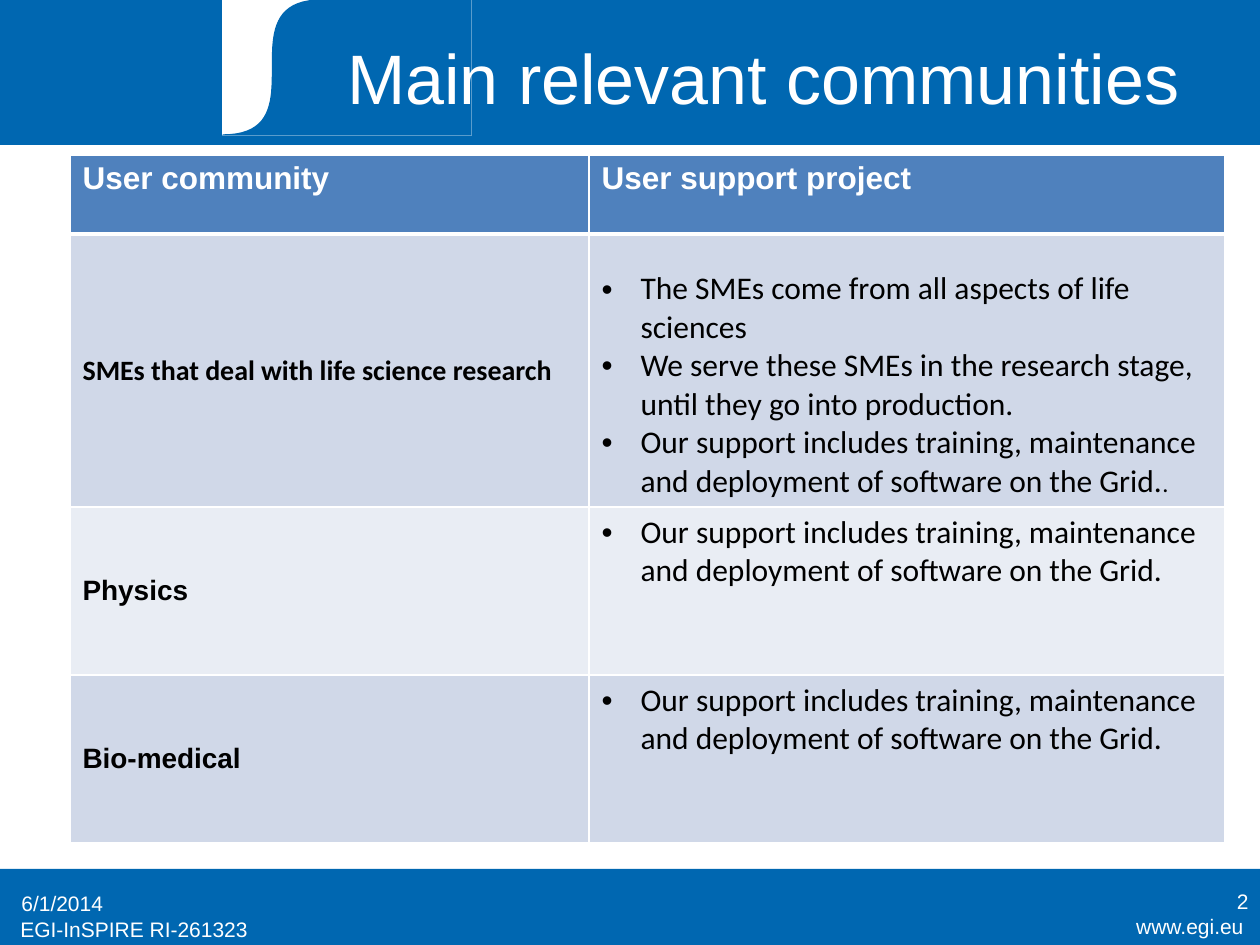
"""Build the slide on the main relevant user communities."""
from lxml import etree
from pptx import Presentation, util as u
from pptx.dml.color import RGBColor
from pptx.enum import shapes, text
from pptx.oxml.ns import qn

BLUE = RGBColor(0x00, 0x67, 0xB1)
HEAD = RGBColor(0x4F, 0x81, 0xBD)
DARK = RGBColor(0xD0, 0xD8, 0xE8)
LIGHT = RGBColor(0xE9, 0xED, 0xF4)
WHITE = RGBColor(0xFF, 0xFF, 0xFF)
BLACK = RGBColor(0x00, 0x00, 0x00)

TITLE = "Main relevant communities"
HEADS = ["User community", "User support project"]
HELP = "Our support includes training, maintenance and deployment of software on the Grid."
ROWS = [
    ("SMEs that deal with life science research", "Calibri", [
        [("The SMEs come from all aspects of life sciences", 18)],
        [("We serve these SMEs in the research stage, until they go into production.", 18)],
        [(HELP, 18), (".", 14)],
    ]),
    ("Physics", "Arial", [[(HELP, 18)]]),
    ("Bio-medical", "Arial", [[(HELP, 18)]]),
]
LEFT, RIGHT = text.PP_ALIGN.LEFT, text.PP_ALIGN.RIGHT
NOTES = [
    ("www.egi.eu", (1057, 907, 199, 39), RIGHT),
    ("EGI-InSPIRE RI-261323", (8, 910, 315, 39), LEFT),
    ("6/1/2014", (9, 878, 294, 50), LEFT),
    ("2", (967, 876, 294, 50), RIGHT),
]
WIDTHS = [519, 636]
HEIGHTS = [79, 273, 168, 168]
GAP = 36
INDENT = 39
MIDDLE = text.MSO_ANCHOR.MIDDLE


def px(n):
    return u.Emu(round(n * 914400 / 126))


def box(*dims):
    return [px(n) for n in dims]


def paint(shape, fill, line=None):
    shape.shadow.inherit = False
    shape.fill.solid()
    shape.fill.fore_color.rgb = fill
    if line is None:
        shape.line.fill.background()
    else:
        shape.line.color.rgb = line
        shape.line.width = u.Pt(0.75)


def write(para, words, size, face, color, bold=False):
    run = para.add_run()
    run.text = words
    font = run.font
    font.size, font.name, font.bold = u.Pt(size), face, bold
    font.color.rgb = color


def bullet(para):
    props = para._p.get_or_add_pPr()
    props.set("marL", str(px(INDENT)))
    props.set("indent", str(-px(INDENT)))
    etree.SubElement(props, qn("a:buFont"), typeface="Arial")
    etree.SubElement(props, qn("a:buChar"), char="•")


def dress(cell, fill, base=1):
    props = cell._tc.get_or_add_tcPr()
    for side, width in (("L", 1), ("R", 1), ("T", 1), ("B", base)):
        edge = etree.SubElement(props, qn("a:ln" + side), w=str(u.Pt(width)))
        ink = etree.SubElement(edge, qn("a:solidFill"))
        etree.SubElement(ink, qn("a:srgbClr"), val=str(WHITE))
    cell.fill.solid()
    cell.fill.fore_color.rgb = fill


def curve(start, end, steps=40):
    (x0, y0), (x1, y1) = start, end
    for i in range(1, steps + 1):
        t = i / steps
        a, b, c, d = (1 - t) ** 3, 3 * t * (1 - t) ** 2, 3 * t * t * (1 - t), t ** 3
        yield px(x0 * (a + c) + x1 * (b + d)), px(y0 * (a + b) + y1 * (c + d))


def frame(slide):
    for dims, fill, line in (
        ((0, 869, 1260, 76), BLUE, None),
        ((0, 0, 1260, 144), BLUE, BLUE),
        ((223, 0, 248, 135), WHITE, WHITE),
    ):
        paint(slide.shapes.add_shape(shapes.MSO_SHAPE.RECTANGLE, *box(*dims)), fill, line)
    pen = slide.shapes.build_freeform(px(471), px(0))
    pen.add_line_segments([box(471, 135), box(223, 135)], close=False)
    pen.add_line_segments(list(curve((223, 135), (322, 0))), close=True)
    paint(pen.convert_to_shape(), BLUE, BLUE)
    for words, dims, align in NOTES:
        body = slide.shapes.add_textbox(*box(*dims)).text_frame
        body.word_wrap = True
        body.vertical_anchor = MIDDLE
        para = body.paragraphs[0]
        para.alignment = align
        write(para, words, 12, "Arial", WHITE)


def heading(slide):
    title = slide.shapes.title
    title.left, title.top, title.width, title.height = box(292, 16, 942, 120)
    body = title.text_frame
    body.vertical_anchor = MIDDLE
    para = body.paragraphs[0]
    para.alignment = text.PP_ALIGN.CENTER
    write(para, TITLE, 40, "Arial", WHITE)
    tree = slide.shapes._spTree
    tree.remove(title._element)
    tree.append(title._element)


def grid(slide):
    dims = box(70, 155, sum(WIDTHS), sum(HEIGHTS))
    table = slide.shapes.add_table(len(HEIGHTS), len(WIDTHS), *dims).table
    for col, width in zip(table.columns, WIDTHS):
        col.width = px(width)
    for row, height in zip(table.rows, HEIGHTS):
        row.height = px(height)
    for j, words in enumerate(HEADS):
        cell = table.cell(0, j)
        dress(cell, HEAD, 3)
        write(cell.text_frame.paragraphs[0], words, 18, "Arial", WHITE, True)
    for i, (name, face, items) in enumerate(ROWS, 1):
        group, help_ = table.cell(i, 0), table.cell(i, 1)
        for cell in (group, help_):
            dress(cell, DARK if i % 2 else LIGHT)
        group.vertical_anchor = MIDDLE
        write(group.text_frame.paragraphs[0], name, 16, face, BLACK, True)
        if len(items) > 1:
            help_.margin_top = px(GAP)
        body = help_.text_frame
        for k, runs in enumerate(items):
            para = body.add_paragraph() if k else body.paragraphs[0]
            bullet(para)
            for words, size in runs:
                write(para, words, size, "Calibri", BLACK)


def main():
    deck = Presentation()
    deck.slide_width, deck.slide_height = box(1260, 945)
    slide = deck.slides.add_slide(deck.slide_layouts[5])
    frame(slide)
    heading(slide)
    grid(slide)
    deck.save("out.pptx")


if __name__ == "__main__":
    main()
